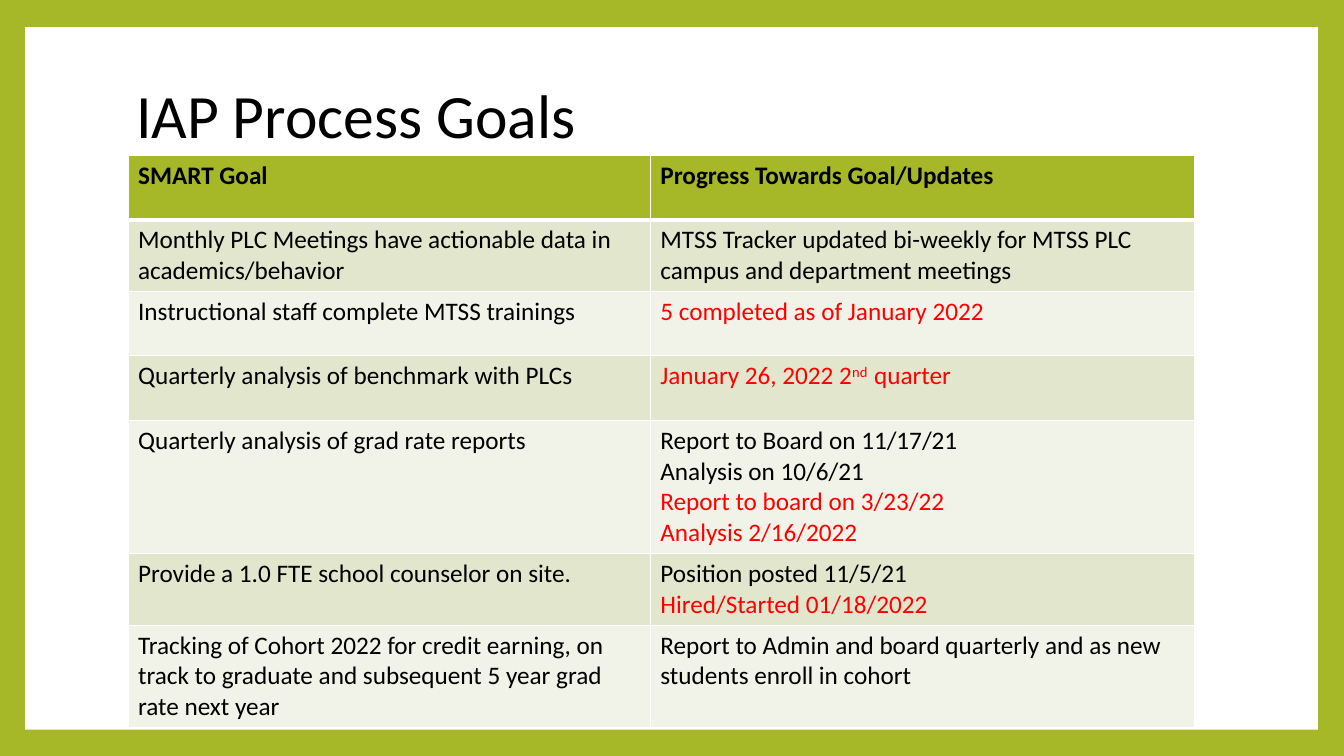
from dataclasses import dataclass

from lxml.etree import SubElement
from pptx import Presentation
from pptx.dml.color import RGBColor as RGB
from pptx.enum.shapes import MSO_SHAPE as SHAPE
from pptx.enum.text import MSO_ANCHOR as ANCHOR, MSO_AUTO_SIZE as AUTO, PP_ALIGN as ALIGN
from pptx.oxml import parse_xml
from pptx.oxml.ns import nsdecls, qn
from pptx.util import Inches, Pt


@dataclass(frozen=True)
class Theme:
    font: str = "Calibri"
    title_size: int = 44
    body_size: int = 18
    green: str = "A6B727"
    white: str = "FFFFFF"
    black: str = "000000"
    red: str = "FF0000"
    bands: tuple = ("E1E6CD", "F1F3E8")
    rule: int = 1
    header_rule: int = 3


THEME = Theme()


@dataclass(frozen=True)
class Run:
    text: str
    new: bool = False  # a recent update, shown in red
    raised: bool = False


def new(text):
    return [Run(text, new=True)]


# Each cell is a list of paragraphs; each paragraph is a string or a list of runs
HEADERS = ["SMART Goal", "Progress Towards Goal/Updates"]
GOALS = [
    ("Monthly PLC Meetings have actionable data in academics/behavior",
     ["MTSS Tracker updated bi-weekly for MTSS PLC campus and department meetings"]),
    ("Instructional staff complete MTSS trainings",
     [new("5 completed as of January 2022")]),
    ("Quarterly analysis of benchmark with PLCs",
     [[Run("January 26, 2022 2", new=True), Run("nd  ", new=True, raised=True),
       Run("quarter", new=True)]]),
    ("Quarterly analysis of grad rate reports",
     ["Report to Board on 11/17/21", "Analysis on 10/6/21",
      new("Report to board on 3/23/22"), new("Analysis 2/16/2022")]),
    ("Provide a 1.0 FTE school counselor on site.",
     ["Position posted 11/5/21", new("Hired/Started 01/18/2022")]),
    ("Tracking of Cohort 2022 for credit earning, on track to graduate and "
     "subsequent 5 year grad rate next year",
     ["Report to Admin and board quarterly and as new students enroll in cohort"]),
]


class SlideBuilder:
    def __init__(self, prs, theme):
        self.theme = theme
        self.slide = prs.slides.add_slide(prs.slide_layouts[5])

    def background(self, color):
        fill = self.slide.background.fill
        fill.solid()
        fill.fore_color.rgb = RGB.from_string(color)

    def panel(self, x, y, w, h):
        sp = self.slide.shapes.add_shape(
            SHAPE.RECTANGLE, Inches(x), Inches(y), Inches(w), Inches(h))
        sp.shadow.inherit = False
        sp.fill.solid()
        sp.fill.fore_color.rgb = RGB.from_string(self.theme.white)
        sp.line.fill.background()
        # Keep the panel behind the title
        self.slide.shapes.title.element.addprevious(sp.element)

    def run(self, p, text, size, color, bold=False, raised=False):
        r = p.add_run()
        r.text = text
        style = {"name": self.theme.font, "size": Pt(size), "bold": bold}
        for key, value in style.items():
            setattr(r.font, key, value)
        r.font.color.rgb = RGB.from_string(color)
        if raised:
            r._r.get_or_add_rPr().set("baseline", "30000")

    def title(self, text, x, y, w, h):
        sp = self.slide.shapes.title
        box = {"left": x, "top": y, "width": w, "height": h}
        for key, value in box.items():
            setattr(sp, key, Inches(value))
        tf = sp.text_frame
        frame = {"word_wrap": True, "auto_size": AUTO.NONE, "vertical_anchor": ANCHOR.MIDDLE}
        for key, value in frame.items():
            setattr(tf, key, value)
        p = tf.paragraphs[0]
        p.alignment, p.line_spacing = ALIGN.LEFT, 0.9
        self.run(p, text, self.theme.title_size, self.theme.black)

    def borders(self, cell, widths):
        tcPr = cell._tc.get_or_add_tcPr()
        for i, (side, width) in enumerate(widths.items()):
            ln = parse_xml(f'<a:ln{side} {nsdecls("a")} w="{Pt(width)}"/>')
            fill = SubElement(ln, qn("a:solidFill"))
            SubElement(fill, qn("a:srgbClr"), val=self.theme.white)
            tcPr.insert(i, ln)

    def cell(self, cell, paragraphs, fill, header=False, below_header=False):
        t = self.theme
        cell.fill.solid()
        cell.fill.fore_color.rgb = RGB.from_string(fill)
        self.borders(cell, {"L": t.rule, "R": t.rule,
                            "T": t.header_rule if below_header else t.rule,
                            "B": t.header_rule if header else t.rule})
        tf = cell.text_frame
        for i, runs in enumerate(paragraphs):
            p = tf.add_paragraph() if i else tf.paragraphs[0]
            for part in [Run(runs)] if isinstance(runs, str) else runs:
                self.run(p, part.text, t.body_size, t.red if part.new else t.black,
                         header, part.raised)

    def table(self, headers, rows, x, y, widths, row_height):
        count = len(rows) + 1
        table = self.slide.shapes.add_table(
            count, len(widths), Inches(x), Inches(y),
            Inches(sum(widths)), Inches(row_height * count)).table
        for column, width in zip(table.columns, widths):
            column.width = Inches(width)
        for row in table.rows:
            row.height = Inches(row_height)
        for c, text in enumerate(headers):
            self.cell(table.cell(0, c), [text], self.theme.green, header=True)
        for r, (goal, progress) in enumerate(rows):
            band = self.theme.bands[r % 2]
            for c, paragraphs in enumerate(([goal], progress)):
                self.cell(table.cell(r + 1, c), paragraphs, band, below_header=r == 0)


def main():
    prs = Presentation()
    prs.slide_width, prs.slide_height = Inches(13.33), Inches(7.5)
    s = SlideBuilder(prs, THEME)

    # Green frame around a white panel
    s.background(THEME.green)
    s.panel(0.25, 0.27, 12.82, 6.97)

    # Title and goals table
    s.title("IAP Process Goals", 1.25, 0.44, 10.8, 1.48)
    s.table(HEADERS, GOALS, 1.27, 1.54, (5.18, 5.4), 0.64)

    prs.save("out.pptx")


if __name__ == "__main__":
    main()
